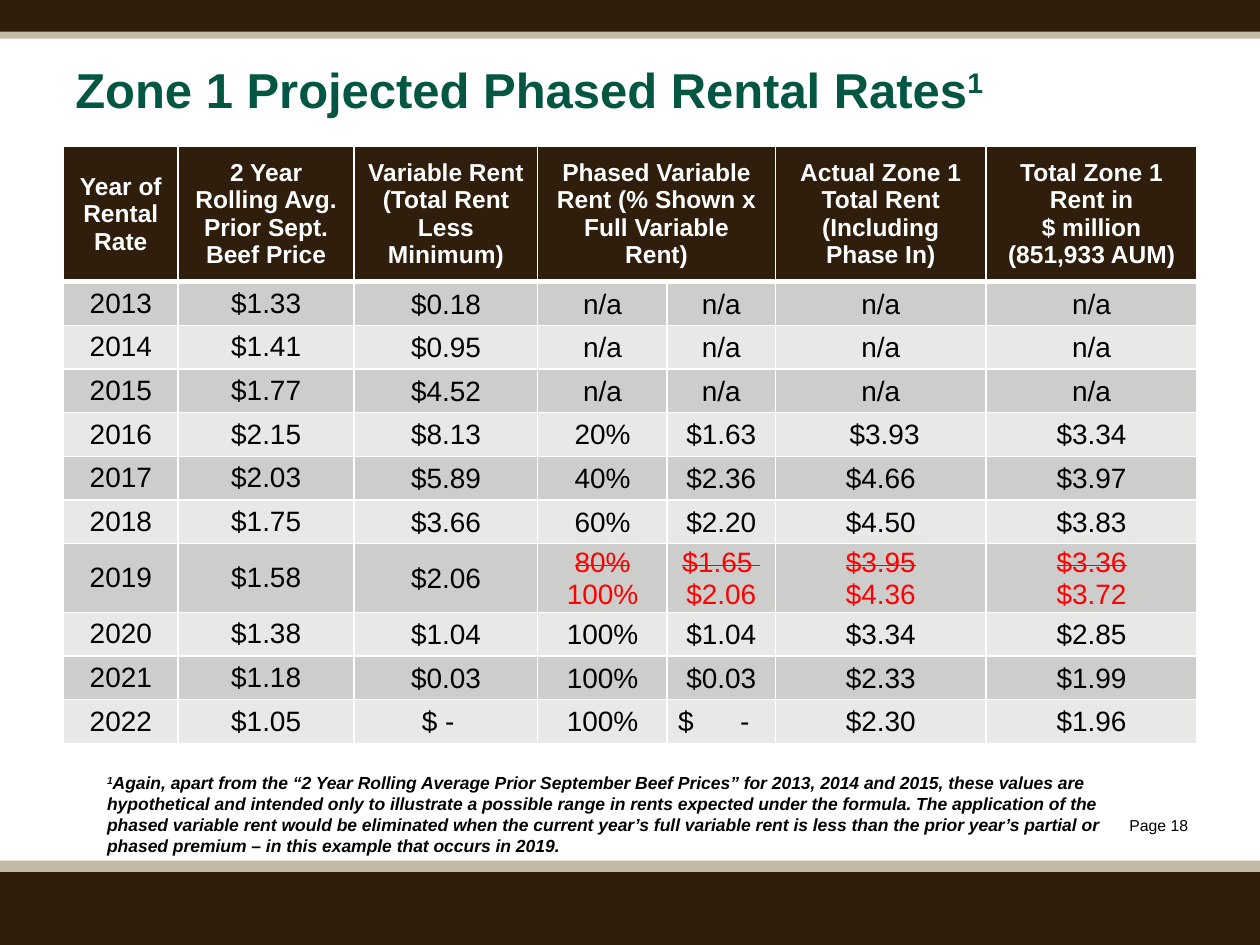
from dataclasses import dataclass

from lxml import etree
from pptx import Presentation
from pptx.dml.color import RGBColor
from pptx.enum.shapes import MSO_SHAPE
from pptx.enum.text import MSO_ANCHOR, PP_ALIGN
from pptx.oxml.ns import qn
from pptx.util import Cm, Pt

RECT = MSO_SHAPE.RECTANGLE
MID = MSO_ANCHOR.MIDDLE
LEFT, MIDST, RIGHT = PP_ALIGN.LEFT, PP_ALIGN.CENTER, PP_ALIGN.RIGHT

BROWN = RGBColor(0x2F, 0x1E, 0x0C)
TAN = RGBColor(0xC2, 0xB9, 0xA6)
GREEN = RGBColor(0x03, 0x56, 0x42)
DARK = RGBColor(0xCD, 0xCD, 0xCC)
LIGHT = RGBColor(0xE8, 0xE8, 0xE7)
WHITE = RGBColor(0xFF, 0xFF, 0xFF)
BLACK = RGBColor(0, 0, 0)
RED = RGBColor(0xFF, 0, 0)


@dataclass(frozen=True)
class Band:
    top: float
    high: float
    fill: RGBColor


@dataclass(frozen=True)
class Style:
    size: int
    ink: RGBColor
    bold: bool = False
    slant: bool = False


@dataclass(frozen=True)
class Piece:
    text: str
    strike: bool = False
    sup: bool = False


@dataclass(frozen=True)
class Note:
    box: tuple[float, float, float, float]
    side: int
    style: Style
    words: tuple[Piece, ...]


BANDS = (
    Band(17.35, 0.43, TAN),
    Band(17.58, 1.47, BROWN),
    Band(0.58, 0.2, TAN),
    Band(0, 0.64, BROWN),
)
NOTES = (
    Note((21.46, 16.31, 2.74, 0.64), RIGHT, Style(9, BLACK), (Piece("Page 18"),)),
    Note((1.27, 1.07, 20.32, 2.03), LEFT, Style(28, GREEN, True),
         (Piece("Zone 1 Projected Phased Rental Rates"), Piece("1", sup=True))),
    Note((1.91, 15.44, 20.75, 1.96), LEFT, Style(10, BLACK, True, True), (
        Piece("1", sup=True),
        Piece("Again, apart from the “2 Year Rolling Average Prior September Beef "
              "Prices” for 2013, 2014 and 2015, these values are hypothetical and "
              "intended only to illustrate a possible range in rents expected under "
              "the formula. The application of the phased variable rent would be "
              "eliminated when the current year’s full variable rent is less than the "
              "prior year’s partial or phased premium – in this example that occurs "
              "in 2019."))),
)

HEAD = Style(14, WHITE, True)
BODY = Style(16, BLACK)
FRESH = Style(16, RED)
WIDTHS = (2.31, 3.55, 3.7, 2.61, 2.18, 4.25, 4.25)
HEADS = (
    "Year of Rental Rate",
    "2 Year Rolling Avg. Prior Sept. Beef Price",
    "Variable Rent (Total Rent Less Minimum)",
    "Phased Variable Rent (% Shown x Full Variable Rent)",
    "",
    "Actual Zone 1 Total Rent (Including Phase In)",
    "Total Zone 1 Rent in\n$ million\n(851,933 AUM)",
)
ROWS = (
    ("2013", "$1.33", "$0.18", "n/a", "n/a", "n/a", "n/a"),
    ("2014", "$1.41", "$0.95", "n/a", "n/a", "n/a", "n/a"),
    ("2015", "$1.77", "$4.52", "n/a", "n/a", "n/a", "n/a"),
    ("2016", "$2.15", "$8.13", "20%", "$1.63", " $3.93", "$3.34"),
    ("2017", "$2.03", "$5.89", "40%", "$2.36", "$4.66", "$3.97"),
    ("2018", "$1.75", "$3.66", "60%", "$2.20", "$4.50", "$3.83"),
    ("2019", "$1.58", "$2.06", "80%\n100%", "$1.65 \n$2.06", "$3.95\n$4.36", "$3.36\n$3.72"),
    ("2020", "$1.38", "$1.04", "100%", "$1.04", "$3.34", "$2.85"),
    ("2021", "$1.18", "$0.03", "100%", "$0.03", "$2.33", "$1.99"),
    ("2022", "$1.05", "$ -", "100%", "$\t-", "$2.30", "$1.96"),
)


def add_run(para, piece: Piece, style: Style) -> None:
    run = para.add_run()
    run.text = piece.text
    font = run.font
    font.name, font.size = "Arial", Pt(style.size)
    font.bold, font.italic = style.bold, style.slant
    font.color.rgb = style.ink
    if piece.strike:
        font._element.set("strike", "sngStrike")
    if piece.sup:
        font._element.set("baseline", "30000")


def add_band(slide, band: Band, wide: int) -> None:
    shape = slide.shapes.add_shape(RECT, 0, Cm(band.top), wide, Cm(band.high))
    shape.shadow.inherit = False
    shape.fill.solid()
    shape.fill.fore_color.rgb = band.fill
    shape.line.fill.background()


def add_note(slide, note: Note) -> None:
    frame = slide.shapes.add_textbox(*map(Cm, note.box)).text_frame
    frame.word_wrap = True
    para = frame.paragraphs[0]
    para.alignment = note.side
    for piece in note.words:
        add_run(para, piece, note.style)


def add_edge(cell, tag: str, points: int) -> None:
    line = etree.SubElement(cell._tc.get_or_add_tcPr(), qn(tag), w=str(Pt(points)))
    fill = etree.SubElement(line, qn("a:solidFill"))
    etree.SubElement(fill, qn("a:srgbClr"), val=str(WHITE))


def paint(cell, fill: RGBColor, top: int, base: int) -> None:
    for tag, points in (("a:lnL", 1), ("a:lnR", 1), ("a:lnT", top), ("a:lnB", base)):
        add_edge(cell, tag, points)
    cell.fill.solid()
    cell.fill.fore_color.rgb = fill
    cell.vertical_anchor = MID


def write(cell, text: str, style: Style) -> None:
    lines = text.split("\n")
    frame = cell.text_frame
    for num, line in enumerate(lines):
        para = frame.add_paragraph() if num else frame.paragraphs[0]
        para.alignment = MIDST
        strike = style is FRESH and num == 0
        if "\t" in line:
            para.alignment = LEFT
            cell.margin_left = Cm(0.22)
            tabs = etree.SubElement(para._p.get_or_add_pPr(), qn("a:tabLst"))
            etree.SubElement(tabs, qn("a:tab"), pos=str(Cm(1.25)), algn="l")
        add_run(para, Piece(line, strike), style)


def set_gaps(cell, col: int, text: str) -> None:
    if col < 2:
        cell.margin_top = cell.margin_bottom = Cm(0.1)
        return
    cell.margin_left = cell.margin_right = cell.margin_top = Cm(0.03)
    cell.margin_bottom = 0
    if text == "$ -":
        cell.margin_right = Cm(0.35)


def add_rents(slide) -> None:
    highs = [2.73] + [1.31 if row[0] == "2019" else 0.88 for row in ROWS]
    grid = slide.shapes.add_table(len(highs), len(WIDTHS), Cm(1.28), Cm(2.95),
                                  Cm(sum(WIDTHS)), Cm(sum(highs))).table
    for col, wide in zip(grid.columns, WIDTHS):
        col.width = Cm(wide)
    for row, high in zip(grid.rows, highs):
        row.height = Cm(high)
    for col, text in enumerate(HEADS):
        cell = grid.cell(0, col)
        paint(cell, BROWN, 1, 3)
        if text:
            write(cell, text, HEAD)
    grid.cell(0, 3).merge(grid.cell(0, 4))
    for num, row in enumerate(ROWS, 1):
        for col, text in enumerate(row):
            cell = grid.cell(num, col)
            paint(cell, DARK if num % 2 else LIGHT, 3 if num == 1 else 1, 1)
            set_gaps(cell, col, text)
            write(cell, text, FRESH if "\n" in text else BODY)


def main() -> None:
    deck = Presentation()
    deck.slide_width, deck.slide_height = Cm(25.4), Cm(19.05)
    slide = deck.slides.add_slide(deck.slide_layouts[6])
    for band in BANDS:
        add_band(slide, band, deck.slide_width)
    for note in NOTES[:2]:
        add_note(slide, note)
    add_rents(slide)
    add_note(slide, NOTES[2])
    deck.save("out.pptx")


if __name__ == "__main__":
    main()
